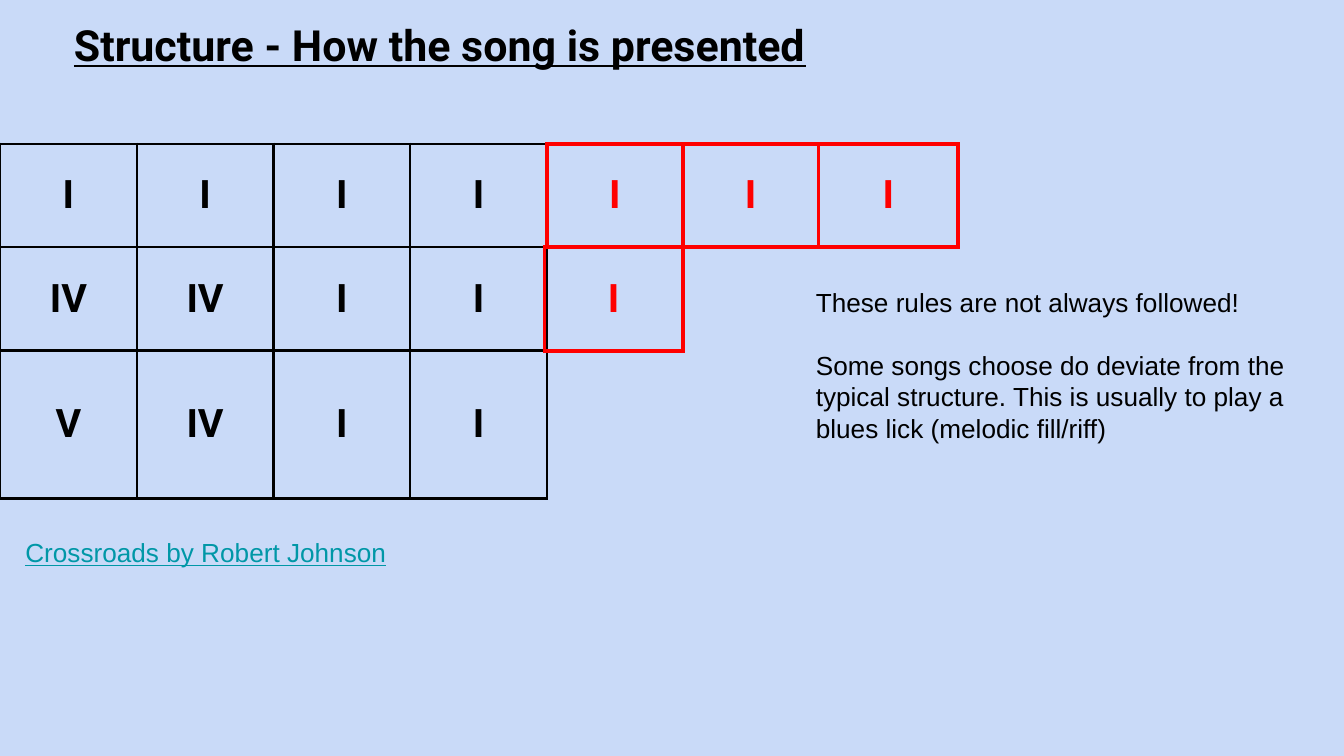
from lxml import etree
from pptx import Presentation
from pptx.dml.color import RGBColor
from pptx.enum.text import MSO_ANCHOR, MSO_AUTO_SIZE, PP_ALIGN
from pptx.oxml.ns import qn
from pptx.util import Inches, Pt

LEFT, CENTER = PP_ALIGN.LEFT, PP_ALIGN.CENTER
TOP, MIDDLE = MSO_ANCHOR.TOP, MSO_ANCHOR.MIDDLE
NO_FIT = MSO_AUTO_SIZE.NONE

COLORS = {"background": "C9DAF8", "text": "000000", "extra": "FF0000", "song": "0097A7"}
HEADING_FONT, BODY_FONT = "Roboto", "Arial"
SLIDE_W = 10
SLIDE_H = SLIDE_W * 9 / 16
ROW_H = 0.77
GRID_TOP = 1.07
GRID_W = 4.07
CHORDS = [["I", "I", "I", "I"], ["IV", "IV", "I", "I"], ["V", "IV", "I", "I"]]
RULES = [
    "These rules are not always followed!",
    "Some songs choose do deviate from the typical structure. "
    "This is usually to play a blues lick (melodic fill/riff)",
]


def rgb(name):
    return RGBColor.from_string(COLORS[name])


def style(p, size, font, color="text", bold=False, underline=False, align=LEFT):
    p.alignment = align
    p.font.size, p.font.name = Pt(size), font
    p.font.bold, p.font.underline = bold, underline
    p.font.color.rgb = rgb(color)


def place(sp, box, margin_y=0.05):
    """Put a text shape in its box and return its prepared text frame."""
    sp.left, sp.top, sp.width, sp.height = map(Inches, box)
    tf = sp.text_frame
    tf.word_wrap, tf.auto_size, tf.vertical_anchor = True, NO_FIT, TOP
    tf.margin_left = tf.margin_right = Inches(0.1)
    tf.margin_top = tf.margin_bottom = Inches(margin_y)
    return tf


def set_borders(cell, color, width):
    tc_pr = cell._tc.get_or_add_tcPr()
    for side in ("lnL", "lnR", "lnT", "lnB"):
        ln = etree.SubElement(tc_pr, qn(f"a:{side}"), w=str(Pt(width)))
        fill = etree.SubElement(ln, qn("a:solidFill"))
        etree.SubElement(fill, qn("a:srgbClr"), val=COLORS[color])


def add_title(slide, box):
    tf = place(slide.shapes.title, box)
    tf.text = "Structure - How the song is presented"
    style(tf.paragraphs[0], 23, HEADING_FONT, bold=True, underline=True)


def add_rules(slide, box):
    tf = place(slide.placeholders[1], box)
    tf.text = "\n".join(RULES)
    for p in tf.paragraphs:
        style(p, 14, BODY_FONT)
        p.line_spacing = 1.0
        p.space_before = p.space_after = Pt(0)
        p_pr = p._p.get_or_add_pPr()
        p_pr.set("marL", "0")
        p_pr.set("indent", "0")
        bullet = etree.Element(qn("a:buNone"))
        p_pr.find(qn("a:spcAft")).addnext(bullet)
    tf.paragraphs[0].space_after = Pt(17)


def add_chord_grid(slide, left, top, chords, widths, heights, color, border):
    size = map(Inches, (left, top, sum(widths), sum(heights)))
    table = slide.shapes.add_table(len(heights), len(widths), *size).table
    table.first_row = table.horz_banding = False
    for column, width in zip(table.columns, widths):
        column.width = Inches(width)
    for row, height, names in zip(table.rows, heights, chords):
        row.height = Inches(height)
        for cell, name in zip(row.cells, names):
            cell.text = name
            cell.vertical_anchor = MIDDLE
            cell.margin_left = cell.margin_right = Inches(0.1)
            cell.margin_top = cell.margin_bottom = Inches(0.1)
            style(cell.text_frame.paragraphs[0], 21, HEADING_FONT, color, bold=True, align=CENTER)
            set_borders(cell, color, border)
            cell.fill.background()


def add_song(slide, box):
    sp = slide.shapes.add_textbox(*map(Inches, box))
    tf = place(sp, box, margin_y=0.1)
    tf.text = "Crossroads by Robert Johnson"
    style(tf.paragraphs[0], 14, BODY_FONT, "song", underline=True)


def main():
    prs = Presentation()
    prs.slide_width, prs.slide_height = Inches(SLIDE_W), Inches(SLIDE_H)
    slide = prs.slides.add_slide(prs.slide_layouts[1])
    slide.background.fill.solid()
    slide.background.fill.fore_color.rgb = rgb("background")

    add_title(slide, (0.45, 0.09, 7.72, 0.58))
    add_rules(slide, (5.97, 2.08, 3.78, 3.34))
    add_chord_grid(slide, 0, GRID_TOP, CHORDS, [GRID_W / 4] * 4, [ROW_H, ROW_H, 1.1], "text", 1.5)
    add_chord_grid(slide, GRID_W, GRID_TOP, [["I"] * 3], [1.01, 1.01, 1.04], [ROW_H], "extra", 2.25)
    add_chord_grid(slide, 4.05, GRID_TOP + ROW_H, [["I"]], [1.03], [ROW_H], "extra", 2.25)
    add_song(slide, (0.09, 3.89, 4.57, 1.12))
    prs.save("out.pptx")


if __name__ == "__main__":
    main()
